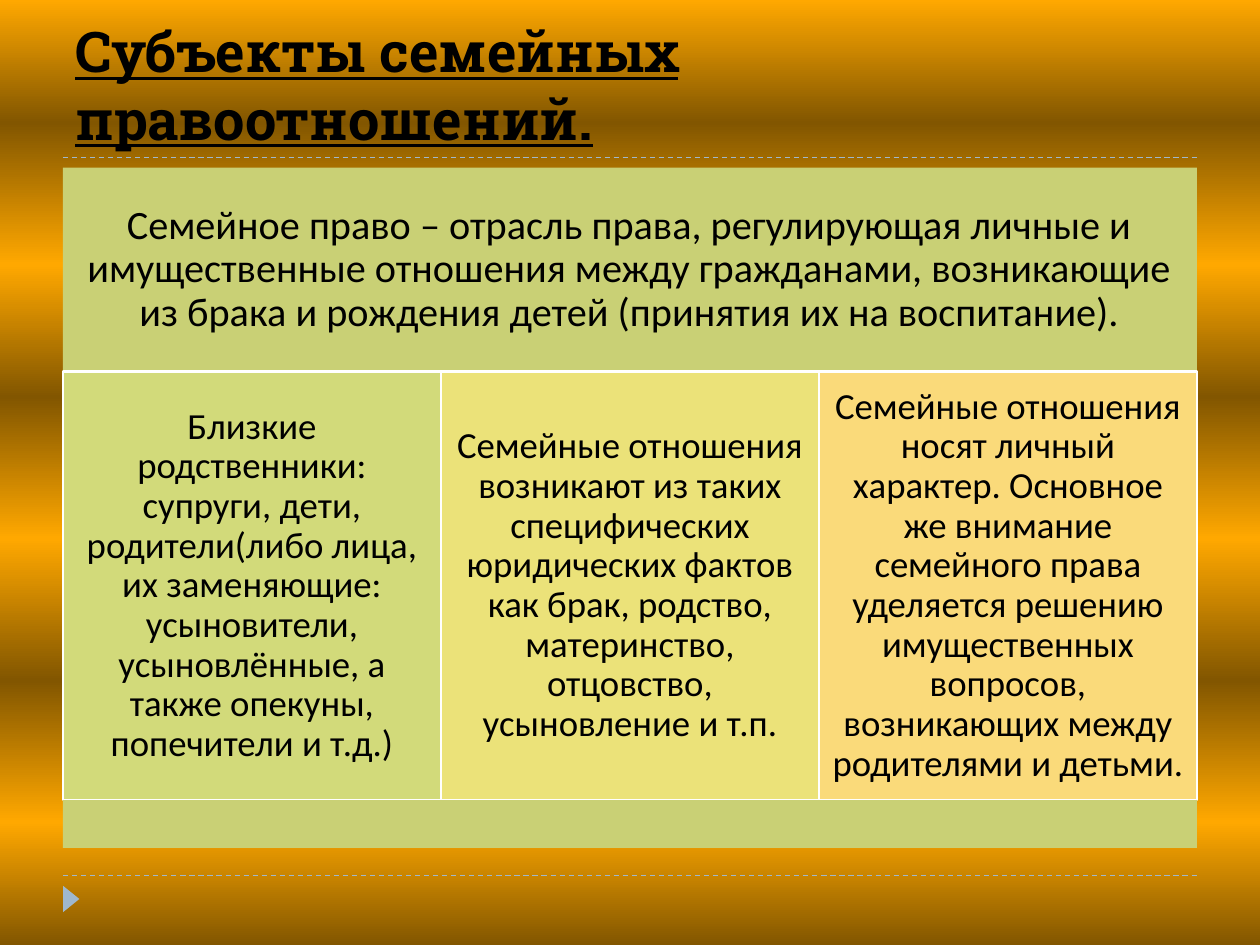
from lxml.etree import SubElement
from pptx import Presentation
from pptx.dml.color import RGBColor
from pptx.enum.dml import MSO_LINE
from pptx.enum.shapes import MSO_CONNECTOR, MSO_SHAPE
from pptx.enum.text import MSO_ANCHOR, PP_ALIGN
from pptx.oxml.ns import qn
from pptx.util import Pt

SCALE = 9144  # EMU in one px, 100 px to the inch
HUES = {
    "dark": "825600", "gold": "FFA800", "blue": "9FB8CD", "band": "C9D075",
    "lime": "D2DA7A", "lemon": "EBE279", "peach": "FADA7A",
    "white": "FFFFFF", "black": "000000",
}
HEAD = {"name": "Roboto Slab", "size": Pt(32), "bold": True, "underline": True}
LEAD = {"name": "Calibri", "size": Pt(23)}
BODY = {"name": "Calibri", "size": Pt(21)}
MID = {"alignment": PP_ALIGN.CENTER, "line_spacing": 0.9}


def put(item, values):
    for key, value in values.items():
        setattr(item, key, value)


class Board:
    def __init__(self, slide):
        self.slide = slide

    def tint(self, name):
        return RGBColor.from_string(HUES[name])

    def emu(self, *px):
        return [n * SCALE for n in px]

    def ground(self, stops):
        fill = self.slide.background.fill
        fill.gradient()
        fill.gradient_angle = 90
        ramp = self.slide.element.find(".//" + qn("a:gsLst"))
        for old in list(ramp):
            ramp.remove(old)
        for spot, name in stops:
            stop = SubElement(ramp, qn("a:gs"), pos=str(spot * 1000))
            SubElement(stop, qn("a:srgbClr"), val=HUES[name])

    def rule(self, left, top, right):
        line = self.slide.shapes.add_connector(
            MSO_CONNECTOR.STRAIGHT, *self.emu(left, top, right, top))
        line.line.color.rgb = self.tint("blue")
        put(line.line, {"width": Pt(0.75), "dash_style": MSO_LINE.DASH})
        SubElement(line.element.spPr, qn("a:effectLst"))

    def shape(self, kind, box, fill, edge=None):
        item = self.slide.shapes.add_shape(kind, *self.emu(*box))
        item.shadow.inherit = False
        item.fill.solid()
        item.fill.fore_color.rgb = self.tint(fill)
        if edge:
            item.line.color.rgb = self.tint(edge)
            item.line.width = Pt(1.5)
        else:
            item.line.fill.background()
        return item

    def label(self, frame, text, font, para, anchor, pads):
        put(frame, {"word_wrap": True, "vertical_anchor": anchor})
        sides = ("margin_left", "margin_top", "margin_right", "margin_bottom")
        put(frame, dict(zip(sides, self.emu(*pads))))
        first = frame.paragraphs[0]
        put(first, para)
        run = first.add_run()
        run.text = text
        put(run.font, font)
        run.font.color.rgb = self.tint("black")

    def title(self, box, text):
        item = self.slide.shapes.add_textbox(*self.emu(*box))
        self.label(item.text_frame, text, HEAD, {"alignment": PP_ALIGN.LEFT},
                   MSO_ANCHOR.BOTTOM, (10, 5, 10, 5))

    def panel(self, box, fill, text, font, pad, edge=None):
        item = self.shape(MSO_SHAPE.RECTANGLE, box, fill, edge)
        self.label(item.text_frame, text, font, MID, MSO_ANCHOR.MIDDLE, [pad] * 4)


def main():
    deck = Presentation()
    put(deck, {"slide_width": 1000 * SCALE, "slide_height": 750 * SCALE})
    board = Board(deck.slides.add_slide(deck.slide_layouts[6]))
    left, wide = 50, 900

    # Background bands, from the bottom up
    spots = (0, 13, 28, 43, 58, 72, 87, 100)
    board.ground([(s, ("dark", "gold")[i % 2]) for i, s in enumerate(spots)])

    # Dashed rules and corner mark
    for top in (695, 125):
        board.rule(left, top, left + wide)
    mark = board.shape(MSO_SHAPE.ISOSCELES_TRIANGLE, (46, 707, 21, 13), "blue")
    mark.rotation = 90

    # Title
    board.title((left, 17, wide, 108), "Субъекты семейных правоотношений.")

    # Definition
    board.panel(
        (left, 133, wide, 162), "band",
        "Семейное право – отрасль права, регулирующая личные и имущественные "
        "отношения между гражданами, возникающие из брака и рождения детей "
        "(принятия их на воспитание).", LEAD, 10)

    # Three columns
    cells = [
        ("lime", "Близкие родственники: супруги, дети, родители(либо лица, "
         "их заменяющие: усыновители, усыновлённые, а также опекуны, "
         "попечители и т.д.)"),
        ("lemon", "Семейные отношения возникают из таких специфических "
         "юридических фактов как брак, родство, материнство, отцовство, "
         "усыновление и т.п."),
        ("peach", "Семейные отношения носят личный характер. Основное же "
         "внимание семейного права уделяется решению имущественных вопросов, "
         "возникающих между родителями и детьми."),
    ]
    step = wide // len(cells)
    for i, (fill, text) in enumerate(cells):
        board.panel((left + i * step, 295, step, 340), fill, text, BODY, 9, "white")

    # Bottom band
    board.shape(MSO_SHAPE.RECTANGLE, (left, 635, wide, 38), "band")

    deck.save("out.pptx")


if __name__ == "__main__":
    main()
